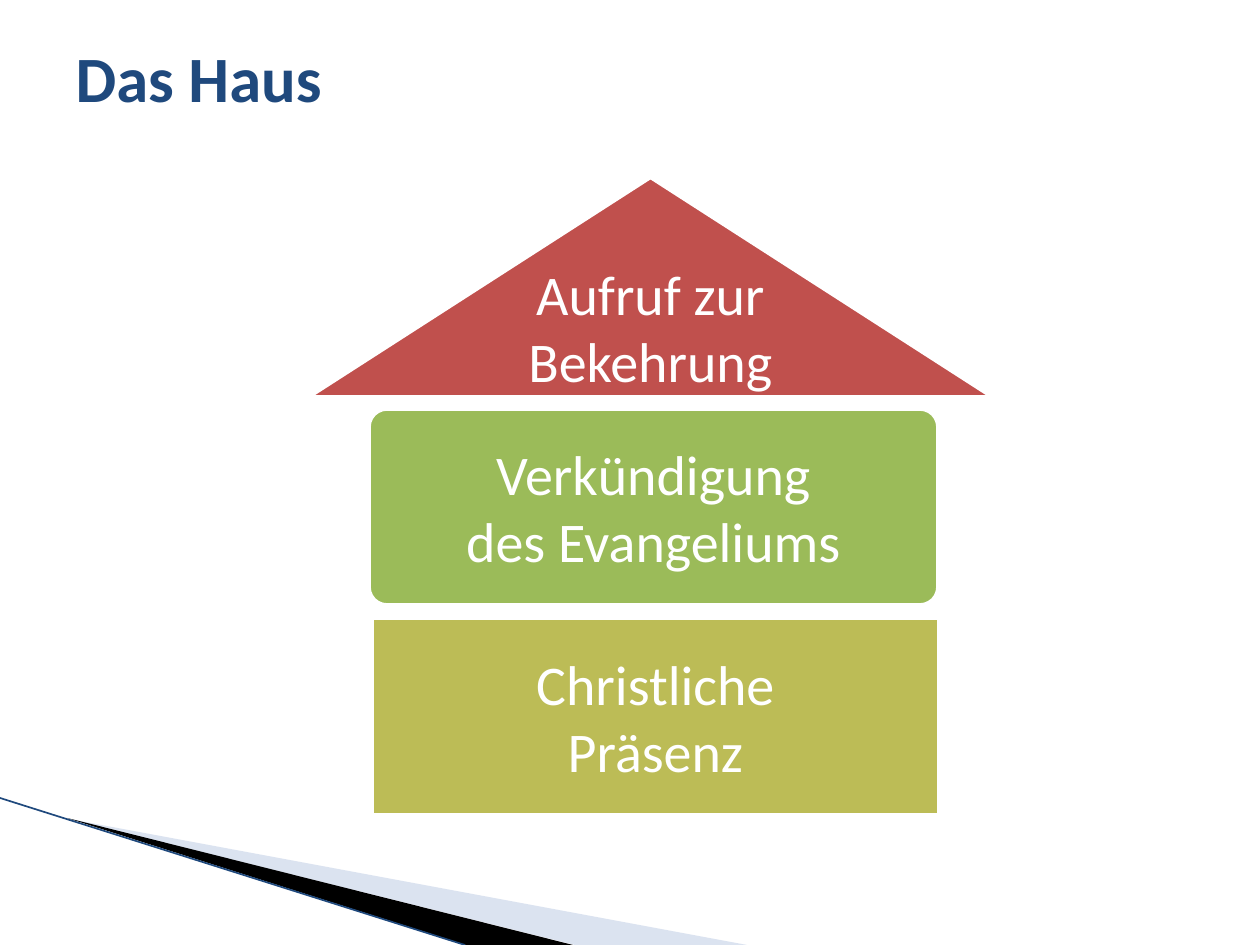
from dataclasses import dataclass

from lxml import etree
from pptx import Presentation
from pptx.dml.color import RGBColor
from pptx.enum.shapes import MSO_CONNECTOR, MSO_SHAPE
from pptx.enum.text import MSO_ANCHOR, PP_ALIGN
from pptx.oxml.ns import qn
from pptx.slide import Slide
from pptx.util import Emu, Pt

EMU_PER_PX = 914400 / 126
FONT = "Calibri"
WHITE = RGBColor(0xFF, 0xFF, 0xFF)
BLACK = RGBColor(0x00, 0x00, 0x00)
NAVY = RGBColor(0x1F, 0x49, 0x7D)
PALE_BLUE = RGBColor(0xA7, 0xB9, 0xDB)
RED = RGBColor(0xC0, 0x50, 0x4D)
GREEN = RGBColor(0x9B, 0xBB, 0x59)
OLIVE = RGBColor(0xBC, 0xBC, 0x56)


@dataclass(frozen=True)
class Storey:
    preset: MSO_SHAPE
    box: tuple[int, int, int, int]
    color: RGBColor
    lines: tuple[str, ...]
    adjustment: float | None = None
    anchor: MSO_ANCHOR = MSO_ANCHOR.MIDDLE


@dataclass(frozen=True)
class Wedge:
    points: tuple[tuple[int, int], ...]
    color: RGBColor
    opacity: int = 100


STOREYS = (
    Storey(MSO_SHAPE.ROUNDED_RECTANGLE, (367, 407, 573, 200), GREEN,
           ("Verkündigung", "des Evangeliums"), 0.1),
    Storey(MSO_SHAPE.ISOSCELES_TRIANGLE, (302, 175, 697, 224), RED,
           ("Aufruf zur", "Bekehrung"), 0.5, MSO_ANCHOR.BOTTOM),
    Storey(MSO_SHAPE.RECTANGLE, (370, 616, 571, 201), OLIVE,
           ("Christliche", "Präsenz")),
)
WEDGES = (
    Wedge(((69, 819), (747, 945), (575, 945)), PALE_BLUE, 40),
    Wedge(((67, 818), (573, 945), (466, 945)), BLACK),
)


def px(length: int) -> Emu:
    return Emu(round(length * EMU_PER_PX))


def add_wedge(slide: Slide, wedge: Wedge) -> None:
    first, *others = wedge.points
    builder = slide.shapes.build_freeform(*first, scale=EMU_PER_PX)
    builder.add_line_segments(others, close=True)
    shape = builder.convert_to_shape()
    shape.shadow.inherit = False
    shape.line.fill.background()
    shape.fill.solid()
    shape.fill.fore_color.rgb = wedge.color
    if wedge.opacity < 100:
        color = shape.fill._xPr.find(f".//{qn('a:srgbClr')}")
        etree.SubElement(color, qn("a:alpha"), val=str(wedge.opacity * 1000))


def add_edge_line(slide: Slide) -> None:
    edge = slide.shapes.add_connector(
        MSO_CONNECTOR.STRAIGHT, px(0), px(798), px(465), px(945))
    edge.line.color.rgb = NAVY
    edge.line.width = Pt(0.95)
    etree.SubElement(edge._element.spPr, qn("a:effectLst"))


def add_title(slide: Slide, wording: str) -> None:
    title = slide.shapes.title
    title.left, title.top, title.width, title.height = map(px, (63, 38, 1197, 77))
    title.text_frame.vertical_anchor = MSO_ANCHOR.MIDDLE
    paragraph = title.text_frame.paragraphs[0]
    paragraph.alignment = PP_ALIGN.LEFT
    run = paragraph.add_run()
    run.text = wording
    run.font.name = FONT
    run.font.size = Pt(36.9)
    run.font.bold = True
    run.font.color.rgb = NAVY


def add_storey(slide: Slide, storey: Storey) -> None:
    shape = slide.shapes.add_shape(storey.preset, *map(px, storey.box))
    shape.shadow.inherit = False
    if storey.adjustment is not None:
        shape.adjustments[0] = storey.adjustment
    shape.fill.solid()
    shape.fill.fore_color.rgb = storey.color
    shape.line.color.rgb = WHITE
    shape.line.width = Pt(4.33)

    frame = shape.text_frame
    frame.word_wrap = True
    frame.vertical_anchor = storey.anchor
    frame.margin_left = frame.margin_right = px(5)
    frame.margin_top = frame.margin_bottom = px(5)
    for index, line in enumerate(storey.lines):
        paragraph = frame.add_paragraph() if index else frame.paragraphs[0]
        paragraph.alignment = PP_ALIGN.CENTER
        run = paragraph.add_run()
        run.text = line
        run.font.name = FONT
        run.font.size = Pt(32)
        run.font.color.rgb = WHITE


def main() -> None:
    presentation = Presentation()
    presentation.slide_width, presentation.slide_height = px(1260), px(945)
    slide = presentation.slides.add_slide(presentation.slide_layouts[5])
    for wedge in WEDGES:
        add_wedge(slide, wedge)
    add_edge_line(slide)
    add_title(slide, "Das Haus")
    for storey in STOREYS:
        add_storey(slide, storey)
    presentation.save("out.pptx")


if __name__ == "__main__":
    main()
